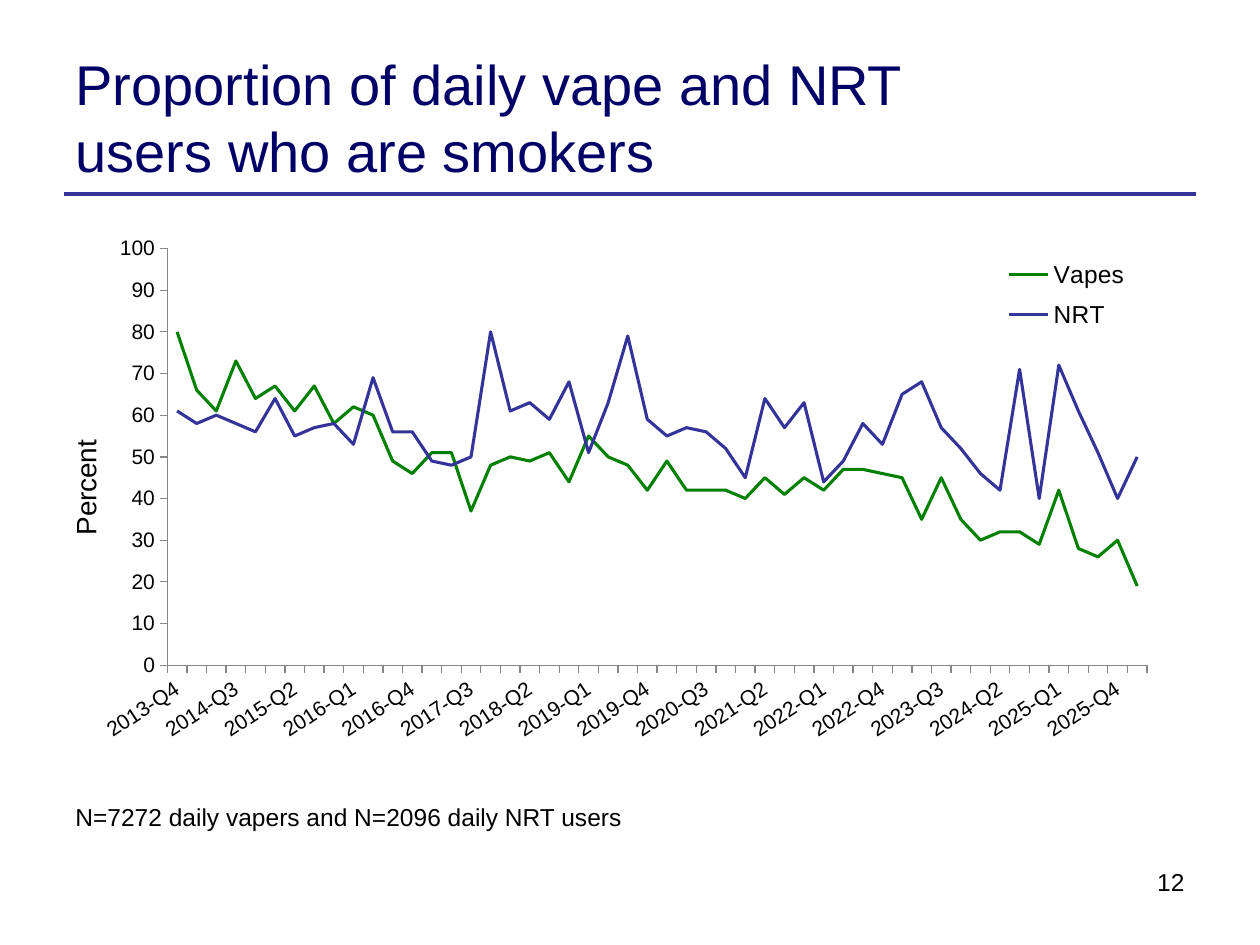
from dataclasses import dataclass

from lxml import etree
from pptx import Presentation
from pptx import util as u
from pptx.chart.data import CategoryChartData
from pptx.dml.color import RGBColor
from pptx.enum import chart as charts, shapes, text
from pptx.oxml import ns

PX = 9525
FONT = "Arial"
NAVY = RGBColor(0x00, 0x00, 0x66)
INDIGO = RGBColor(0x33, 0x33, 0x99)
GREEN = RGBColor(0x00, 0x80, 0x00)
BLACK = RGBColor(0x00, 0x00, 0x00)
GREY = RGBColor(0x86, 0x86, 0x86)


@dataclass(frozen=True)
class Area:
    left: int
    top: int
    width: int
    height: int

    def emu(self) -> tuple:
        return tuple(n * PX for n in (self.left, self.top, self.width, self.height))


@dataclass(frozen=True)
class Trend:
    name: str
    color: RGBColor
    values: tuple


TRENDS = (
    Trend("Vapes", GREEN, (
        80, 66, 61, 73, 64, 67, 61, 67, 58, 62, 60, 49, 46, 51, 51, 37, 48,
        50, 49, 51, 44, 55, 50, 48, 42, 49, 42, 42, 42, 40, 45, 41, 45, 42,
        47, 47, 46, 45, 35, 45, 35, 30, 32, 32, 29, 42, 28, 26, 30, 19)),
    Trend("NRT", INDIGO, (
        61, 58, 60, 58, 56, 64, 55, 57, 58, 53, 69, 56, 56, 49, 48, 50, 80,
        61, 63, 59, 68, 51, 63, 79, 59, 55, 57, 56, 52, 45, 64, 57, 63, 44,
        49, 58, 53, 65, 68, 57, 52, 46, 42, 71, 40, 72, 61, 51, 40, 50)),
)
QUARTERS = [f"{2013 + n // 4}-Q{n % 4 + 1}" for n in range(3, 53)]


def set_font(font, size: int, color: RGBColor = BLACK) -> None:
    font.name, font.size, font.bold = FONT, u.Pt(size), False
    font.color.rgb = color


def write(box, words: str, *, size: int, color: RGBColor = BLACK,
          align=text.PP_ALIGN.LEFT, anchor=text.MSO_ANCHOR.TOP) -> None:
    frame = box.text_frame
    frame.word_wrap = True
    frame.auto_size = text.MSO_AUTO_SIZE.NONE
    frame.vertical_anchor = anchor
    para = frame.paragraphs[0]
    para.alignment = align
    span = para.add_run()
    span.text = words
    set_font(span.font, size, color)


def add_rule(page, left: int, right: int, y: int) -> None:
    rule = page.shapes.add_connector(
        shapes.MSO_CONNECTOR.STRAIGHT, left * PX, y * PX, right * PX, y * PX)
    rule.line.color.rgb = INDIGO
    rule.line.width = u.Pt(2.25)
    etree.SubElement(rule._element.spPr, ns.qn("a:effectLst"))


def place(element, index: int, **values) -> None:
    for old in element.findall(ns.qn("c:layout")):
        element.remove(old)
    layout = etree.Element(ns.qn("c:layout"))
    manual = etree.SubElement(layout, ns.qn("c:manualLayout"))
    for key, value in values.items():
        etree.SubElement(manual, ns.qn(f"c:{key}")).set("val", str(value))
    element.insert(index, layout)


def style_axis(axis) -> None:
    axis.has_major_gridlines = False
    axis.major_tick_mark = charts.XL_TICK_MARK.OUTSIDE
    axis.minor_tick_mark = charts.XL_TICK_MARK.NONE
    axis.format.line.color.rgb = GREY
    axis.format.line.width = u.Pt(0.75)
    set_font(axis.tick_labels.font, 12)


def add_trend_chart(page, area: Area) -> None:
    data = CategoryChartData()
    data.categories = QUARTERS
    for trend in TRENDS:
        data.add_series(trend.name, trend.values)
    chart = page.shapes.add_chart(
        charts.XL_CHART_TYPE.LINE, *area.emu(), data).chart
    set_font(chart.font, 18)
    chart.has_title = False
    chart.plots[0].vary_by_categories = False
    for series, trend in zip(chart.plots[0].series, TRENDS):
        series.smooth = False
        series.marker.style = charts.XL_MARKER_STYLE.NONE
        series.format.line.color.rgb = trend.color
        series.format.line.width = u.Pt(1.75)

    quarters, percent = chart.category_axis, chart.value_axis
    style_axis(quarters)
    style_axis(percent)
    body = quarters._element.find(ns.qn("c:txPr")).find(ns.qn("a:bodyPr"))
    body.set("rot", "-2000000")
    skip = etree.Element(ns.qn("c:tickLblSkip"))
    skip.set("val", "3")
    quarters._element.find(ns.qn("c:noMultiLvlLbl")).addprevious(skip)
    percent.minimum_scale, percent.maximum_scale = 0, 100
    percent.major_unit = 10
    para = percent.axis_title.text_frame.paragraphs[0]
    span = para.add_run()
    span.text = "Percent"
    set_font(span.font, 16)

    chart.has_legend = True
    chart.legend.position = charts.XL_LEGEND_POSITION.RIGHT
    chart.legend.include_in_layout = True
    set_font(chart.legend.font, 14)
    edges = {"xMode": "edge", "yMode": "edge"}
    place(percent.axis_title._element, 1, **edges, x=0, y=0.39)
    place(chart.legend._element, 1, **edges, x=0.82, y=0.05, w=0.13, h=0.17)
    plot_area = chart._chartSpace.chart.plotArea
    place(plot_area, 0, layoutTarget="inner", **edges,
          x=0.092, y=0.051, w=0.864, h=0.758)


def main() -> None:
    """Build the slide on smoking among daily vape and NRT users."""
    deck = Presentation()
    deck.slide_width, deck.slide_height = 960 * PX, 720 * PX
    page = deck.slides.add_slide(deck.slide_layouts[5])
    title = page.shapes.title
    title.left, title.top, title.width, title.height = Area(48, 29, 757, 120).emu()
    write(title, "Proportion of daily vape and NRT users who are smokers",
          size=32, color=NAVY, anchor=text.MSO_ANCHOR.MIDDLE)
    add_rule(page, 49, 911, 148)
    add_trend_chart(page, Area(48, 168, 864, 419))
    caption = page.shapes.add_textbox(*Area(48, 606, 793, 32).emu())
    write(caption, "N=7272 daily vapers and N=2096 daily NRT users", size=14)
    number = page.shapes.add_textbox(*Area(646, 656, 266, 50).emu())
    write(number, "12", size=14, align=text.PP_ALIGN.RIGHT)
    deck.save("out.pptx")


if __name__ == "__main__":
    main()
